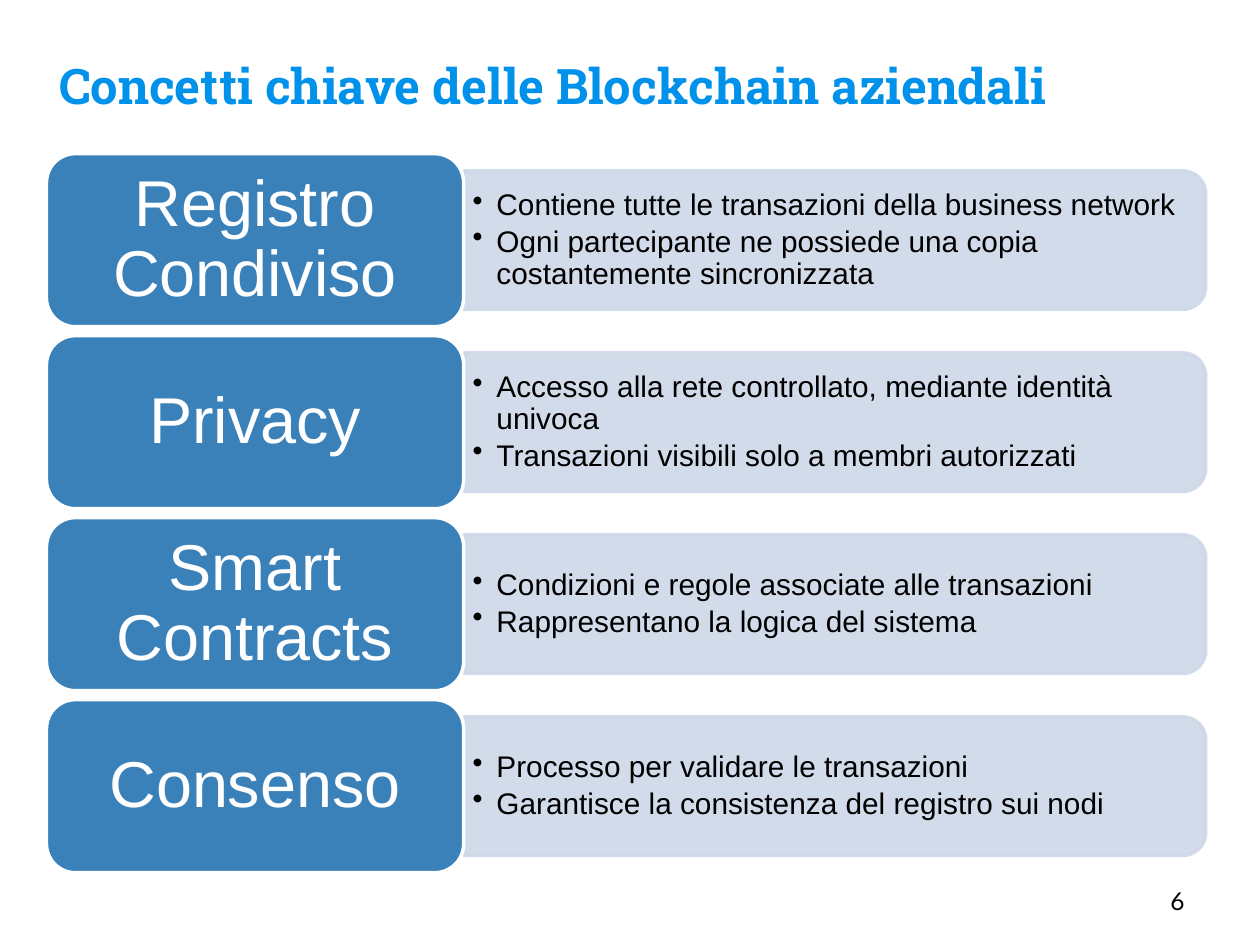
from lxml.etree import SubElement
from pptx import Presentation
from pptx.dml.color import RGBColor
from pptx.enum.shapes import MSO_SHAPE
from pptx.enum.text import MSO_ANCHOR, MSO_AUTO_SIZE, PP_ALIGN
from pptx.oxml.ns import qn
from pptx.util import Pt


def color(hex_string):
    return RGBColor.from_string(hex_string)


def style_frame(frame, size, font, ink, margins, anchor, bold=False):
    frame.word_wrap = True
    frame.auto_size = MSO_AUTO_SIZE.NONE
    frame.vertical_anchor = anchor
    frame.margin_left = frame.margin_right = Pt(margins[0])
    frame.margin_top = frame.margin_bottom = Pt(margins[1])
    for paragraph in frame.paragraphs:
        for span in paragraph.runs:
            span.font.size = Pt(size)
            span.font.name = font
            span.font.bold = bold
            span.font.color.rgb = color(ink)


concepts = [
    ("Registro Condiviso", [
        "Contiene tutte le transazioni della business network",
        "Ogni partecipante ne possiede una copia costantemente sincronizzata"]),
    ("Privacy", [
        "Accesso alla rete controllato, mediante identità univoca",
        "Transazioni visibili solo a membri autorizzati"]),
    ("Smart Contracts", [
        "Condizioni e regole associate alle transazioni",
        "Rappresentano la logica del sistema"]),
    ("Consenso", [
        "Processo per validare le transazioni",
        "Garantisce la consistenza del registro sui nodi"]),
]

deck = Presentation()
deck.slide_width, deck.slide_height = Pt(720), Pt(540)
page = deck.slides.add_slide(deck.slide_layouts[5])

title = page.shapes.title
title.left, title.top, title.width, title.height = Pt(26.6), Pt(0), Pt(635), Pt(72.7)
title.text_frame.text = "Concetti chiave delle Blockchain aziendali"
title.text_frame.paragraphs[0].alignment = PP_ALIGN.LEFT
style_frame(title.text_frame, 28, "Roboto Slab", "0091EA", (7.2, 7.2), MSO_ANCHOR.BOTTOM, True)

number_box = page.shapes.add_textbox(Pt(661.7), Pt(499), Pt(43.2), Pt(41))
number_box.text_frame.text = "6"
style_frame(number_box.text_frame, 14, "Lato", "000000", (7.2, 7.2), MSO_ANCHOR.TOP)

card_left, card_width, card_height = 26.6, 238.4, 98.9
first_top, row_pitch = 87.8, 104
panel_left, panel_width, panel_height = card_left + card_width, 424, 79.2

for row, (name, points) in enumerate(concepts):
    card_top = first_top + row * row_pitch
    middle = card_top + card_height / 2

    panel = page.shapes.add_shape(
        MSO_SHAPE.ROUND_2_SAME_RECTANGLE,
        Pt(panel_left + (panel_width - panel_height) / 2), Pt(middle - panel_width / 2),
        Pt(panel_height), Pt(panel_width))
    panel.rotation = 90
    panel.shadow.inherit = False
    panel.fill.solid()
    panel.fill.fore_color.rgb = color("CED8E7")
    panel.line.color.rgb = color("CED8E7")
    panel.line.width = Pt(2)
    for paint in panel.element.spPr.iter(qn("a:srgbClr")):
        SubElement(paint, qn("a:alpha"), val="90000")

    points_box = page.shapes.add_textbox(
        Pt(panel_left), Pt(middle - 35.7), Pt(420), Pt(71.4))
    points_box.text_frame.text = "\n".join(points)
    for paragraph in points_box.text_frame.paragraphs:
        properties = paragraph._p.get_or_add_pPr()
        properties.set("marL", str(Pt(13.7)))
        properties.set("indent", str(Pt(-13.7)))
        SubElement(properties, qn("a:buChar"), char="•")
        paragraph.line_spacing = 0.9
        paragraph.space_after = Pt(2.5)
    style_frame(points_box.text_frame, 17, "Arial", "000000", (5, 2.9), MSO_ANCHOR.MIDDLE)

    card = page.shapes.add_shape(
        MSO_SHAPE.ROUNDED_RECTANGLE,
        Pt(card_left), Pt(card_top), Pt(card_width), Pt(card_height))
    card.shadow.inherit = False
    card.fill.solid()
    card.fill.fore_color.rgb = color("3A81BA")
    card.line.color.rgb = color("FFFFFF")
    card.line.width = Pt(2)
    card.text_frame.text = name
    card.text_frame.paragraphs[0].alignment = PP_ALIGN.CENTER
    card.text_frame.paragraphs[0].line_spacing = 0.9
    style_frame(card.text_frame, 37, "Arial", "FFFFFF", (10.8, 5.8), MSO_ANCHOR.MIDDLE)

deck.save("out.pptx")
